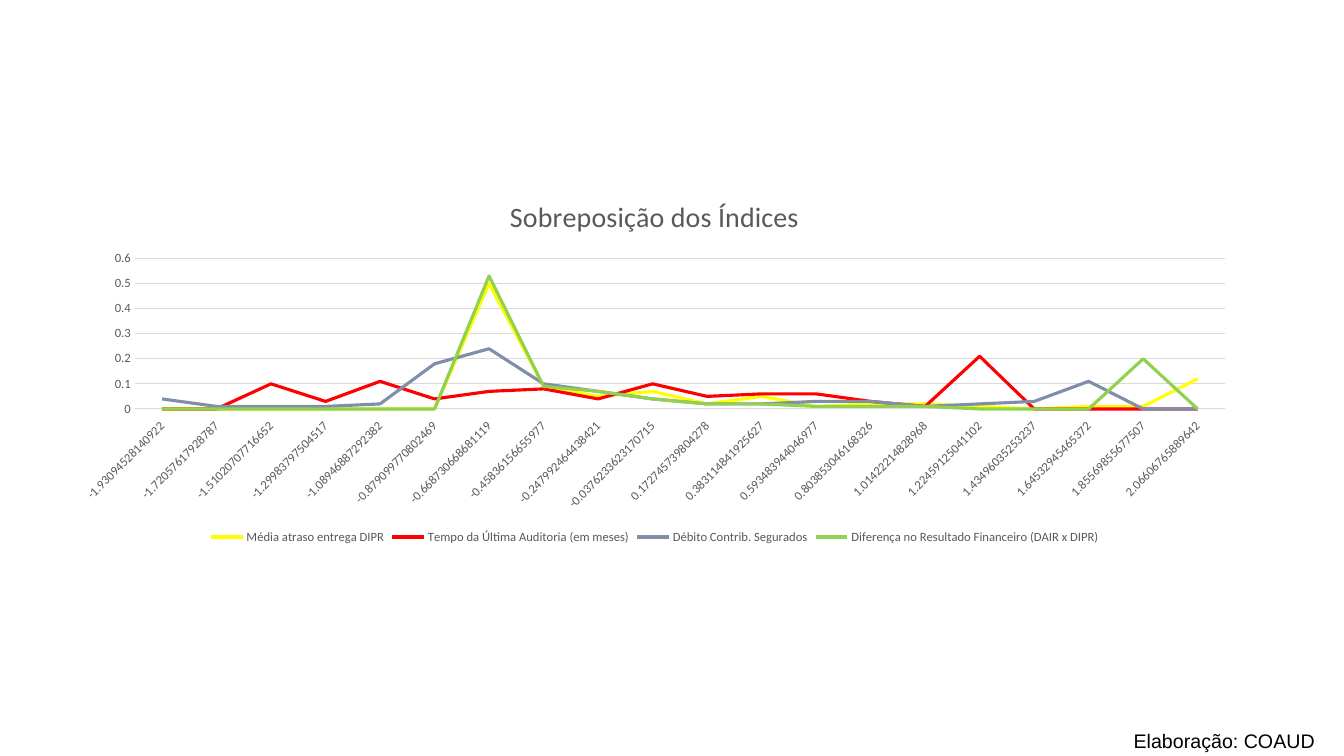
import pptx
import pptx.util
import pptx.chart.data
import pptx.dml.color
import pptx.enum.chart
import pptx.enum.text

Cm, Pt = pptx.util.Cm, pptx.util.Pt
RGB = pptx.dml.color.RGBColor.from_string
enum = pptx.enum.chart


class Theme:
    ink, gray, rule = RGB("000000"), RGB("595959"), RGB("D9D9D9")
    lines = [RGB(tone) for tone in ("FFFF00", "FF0000", "7F8FA9", "92D050")]
    title = {"name": "Calibri", "size": Pt(20), "bold": False}
    label = {"name": "Calibri", "size": Pt(9), "bold": False}
    note = {"name": "Arial", "size": Pt(14)}


def apply(item, form):
    for key, value in form.items():
        setattr(item, key, value)


class Deck:
    def __init__(self, theme):
        self.theme = theme
        self.show = pptx.Presentation()
        apply(self.show, {"slide_width": Cm(33.87), "slide_height": Cm(19.05)})
        self.slide = self.show.slides.add_slide(self.show.slide_layouts[6])

    def font(self, font, form, color):
        apply(font, form)
        font.color.rgb = color

    def text(self, words, box):
        frame = self.slide.shapes.add_textbox(*map(Cm, box)).text_frame
        apply(frame, {"word_wrap": False,
                      "auto_size": pptx.enum.text.MSO_AUTO_SIZE.SHAPE_TO_FIT_TEXT})
        run = frame.paragraphs[0].add_run()
        run.text = words
        self.font(run.font, self.theme.note, self.theme.ink)

    def stroke(self, line, color, width):
        line.color.rgb = color
        line.width = Pt(width)

    def chart(self, title, cats, rows, box):
        theme = self.theme
        data = pptx.chart.data.CategoryChartData()
        data.categories = cats
        for name, vals in rows.items():
            data.add_series(name, vals)
        chart = self.slide.shapes.add_chart(
            enum.XL_CHART_TYPE.LINE, *map(Cm, box), data).chart
        self.font(chart.font, theme.label, theme.gray)

        # Title and legend
        chart.has_title = True
        run = chart.chart_title.text_frame.paragraphs[0].add_run()
        run.text = title
        self.font(run.font, theme.title, theme.gray)
        chart.chart_title.include_in_layout = False
        chart.has_legend = True
        apply(chart.legend, {"position": enum.XL_LEGEND_POSITION.BOTTOM,
                             "include_in_layout": False})
        self.font(chart.legend.font, theme.label, theme.gray)

        # Axes
        base, side = chart.category_axis, chart.value_axis
        for axis in (base, side):
            apply(axis, {"major_tick_mark": enum.XL_TICK_MARK.NONE,
                         "minor_tick_mark": enum.XL_TICK_MARK.NONE})
            self.font(axis.tick_labels.font, theme.label, theme.gray)
        base.tick_label_position = enum.XL_TICK_LABEL_POSITION.LOW
        self.stroke(base.format.line, theme.rule, 0.75)
        apply(side, {"minimum_scale": 0, "maximum_scale": 0.6,
                     "major_unit": 0.1, "has_major_gridlines": True})
        side.format.line.fill.background()
        self.stroke(side.major_gridlines.format.line, theme.rule, 0.75)

        # Series
        chart.plots[0].vary_by_categories = False
        for row, color in zip(chart.plots[0].series, theme.lines):
            row.smooth = False
            row.marker.style = enum.XL_MARKER_STYLE.NONE
            self.stroke(row.format.line, color, 2.25)


CATS = """
-1.93094528140922 -1.72057617928787 -1.51020707716652 -1.29983797504517
-1.08946887292382 -0.879099770802469 -0.668730668681119 -0.45836156655977
-0.247992464438421 -0.0376233623170715 0.172745739804278 0.383114841925627
0.593483944046977 0.803853046168326 1.01422214828968 1.22459125041102
1.43496035253237 1.64532945465372 1.85569855677507 2.06606765889642
""".split()

ROWS = {
    "Média atraso entrega DIPR": [
        0, 0, 0, 0, 0, 0, 0.5, 0.09, 0.05, 0.07,
        0.02, 0.05, 0.01, 0.02, 0.02, 0.01, 0, 0.01, 0.01, 0.12],
    "Tempo da Última Auditoria (em meses)": [
        0, 0, 0.1, 0.03, 0.11, 0.04, 0.07, 0.08, 0.04, 0.1,
        0.05, 0.06, 0.06, 0.03, 0.01, 0.21, 0, 0, 0, 0],
    "Débito Contrib. Segurados": [
        0.04, 0.01, 0.01, 0.01, 0.02, 0.18, 0.24, 0.1, 0.07, 0.04,
        0.02, 0.02, 0.03, 0.03, 0.01, 0.02, 0.03, 0.11, 0, 0],
    "Diferença no Resultado Financeiro (DAIR x DIPR)": [
        0, 0, 0, 0, 0, 0, 0.53, 0.09, 0.07, 0.04,
        0.02, 0.02, 0.01, 0.01, 0.01, 0, 0, 0, 0.2, 0],
}


def main():
    deck = Deck(Theme)
    deck.text("Elaboração: COAUD", (28.32, 18.24, 5.11, 0.86))
    deck.chart("Sobreposição dos Índices", CATS, ROWS, (1.52, 4.52, 29.95, 9.3))
    deck.show.save("out.pptx")


if __name__ == "__main__":
    main()
